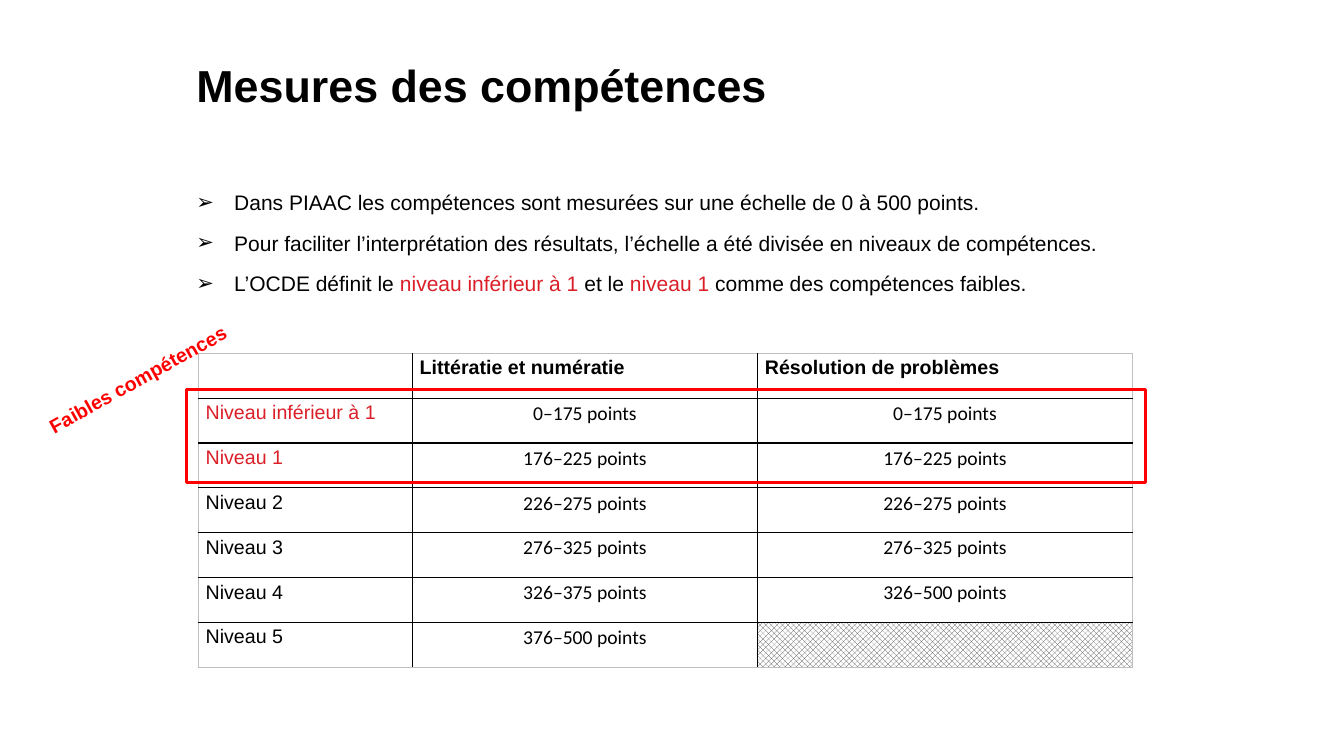
from lxml.etree import SubElement
from pptx import Presentation
from pptx.dml.color import RGBColor
from pptx.enum.dml import MSO_PATTERN_TYPE as Pattern
from pptx.enum.shapes import MSO_SHAPE as Preset
from pptx.enum.text import PP_ALIGN as Align
from pptx.oxml.ns import qn
from pptx.util import Pt

BLACK, WHITE, CRIMSON, RED = "000000", "FFFFFF", "DA1F28", "FF0000"
GREY, HATCH = "BFBFBF", "464646"


def color(hex_text):
    return RGBColor.from_string(hex_text)


def write(paragraph, text, size=14, ink=BLACK, font="Arial", bold=False, align=Align.LEFT):
    paragraph.alignment = align
    run = paragraph.add_run()
    run.text = text
    run.font.size, run.font.name, run.font.bold = Pt(size), font, bold
    run.font.color.rgb = color(ink)


class SlideBuilder:
    """Holds the current slide and the shared style of its elements."""

    body_size = 15
    bullet_indent = 27
    cell_margins = (5.2, 2.6)

    def __init__(self, slide):
        self.slide = slide

    def text_box(self, left, top, width, height, rotation=0):
        shape = self.slide.shapes.add_textbox(Pt(left), Pt(top), Pt(width), Pt(height))
        shape.rotation = rotation
        shape.text_frame.word_wrap = True
        return shape.text_frame

    def label(self, place, text, rotation=0, **style):
        frame = self.text_box(*place, rotation=rotation)
        write(frame.paragraphs[0], text, bold=True, **style)

    def bullets(self, place, items):
        frame = self.text_box(*place)
        for index, parts in enumerate(items):
            paragraph = frame.add_paragraph() if index else frame.paragraphs[0]
            paragraph.line_spacing = Pt(26)
            paragraph.space_before = Pt(3 if index else 0)
            properties = paragraph._p.get_or_add_pPr()
            properties.set("marL", str(Pt(self.bullet_indent)))
            properties.set("indent", str(-Pt(self.bullet_indent)))
            SubElement(properties, qn("a:buFont"), typeface="Arial")
            SubElement(properties, qn("a:buChar"), char="➢")
            for text, ink in parts:
                write(paragraph, text, size=self.body_size, ink=ink)

    def border(self, cell, side, ink, width):
        line = SubElement(cell._tc.get_or_add_tcPr(), qn(f"a:ln{side}"), w=str(Pt(width)))
        fill = SubElement(line, qn("a:solidFill"))
        SubElement(fill, qn("a:srgbClr"), val=ink)

    def table(self, left, top, widths, row_height, rows):
        last_row, last_column = len(rows) - 1, len(widths) - 1
        frame = self.slide.shapes.add_table(
            len(rows), len(widths), Pt(left), Pt(top), Pt(sum(widths)), Pt(row_height * len(rows)))
        table = frame.table
        table.first_row = table.horz_banding = False
        for column, width in zip(table.columns, widths):
            column.width = Pt(width)
        for i, texts in enumerate(rows):
            table.rows[i].height = Pt(row_height)
            for j, text in enumerate(texts):
                cell = table.cell(i, j)
                cell.margin_left = cell.margin_right = Pt(self.cell_margins[0])
                cell.margin_top = cell.margin_bottom = Pt(self.cell_margins[1])
                outer = {"L": j == 0, "R": j == last_column, "T": i == 0, "B": i == last_row}
                for side, at_edge in outer.items():
                    self.border(cell, side, *((GREY, 0.5) if at_edge else (BLACK, 1)))
                cell.fill.background()
                if text:
                    self.cell_text(cell, text, i, j)
        return table

    def cell_text(self, cell, text, row, column):
        is_value = row > 0 and column > 0
        write(cell.text_frame.paragraphs[0], text, bold=row == 0,
              ink=CRIMSON if row in (1, 2) and column == 0 else BLACK,
              font="Calibri" if is_value else "Arial",
              align=Align.CENTER if is_value else Align.LEFT)

    def hatch(self, cell):
        cell.fill.patterned()
        cell.fill.pattern = Pattern.OUTLINED_DIAMOND
        cell.fill.fore_color.rgb = color(HATCH)
        cell.fill.back_color.rgb = color(WHITE)

    def outline(self, left, top, width, height):
        shape = self.slide.shapes.add_shape(
            Preset.RECTANGLE, Pt(left), Pt(top), Pt(width), Pt(height))
        shape.shadow.inherit = False
        shape.fill.background()
        shape.line.color.rgb = color(RED)
        shape.line.width = Pt(2)


def main():
    presentation = Presentation()
    presentation.slide_width, presentation.slide_height = Pt(960), Pt(540)
    builder = SlideBuilder(presentation.slides.add_slide(presentation.slide_layouts[6]))

    builder.label((133.2, 38, 660, 52), "Mesures des compétences", size=32)
    builder.bullets((133.2, 123.8, 757.4, 100.8), [
        [("Dans PIAAC les compétences sont mesurées sur une échelle de 0 à 500 points.", BLACK)],
        [("Pour faciliter l’interprétation des résultats, l’échelle a été divisée "
          "en niveaux de compétences.", BLACK)],
        [("L’OCDE définit le ", BLACK), ("niveau inférieur à 1 ", CRIMSON), ("et le ", BLACK),
         ("niveau 1", CRIMSON), (" comme des compétences faibles.", BLACK)],
    ])
    levels = builder.table(141.7, 252.4, (152.9, 246.6, 267.8), 32.05, [
        ("", "Littératie et numératie", "Résolution de problèmes"),
        ("Niveau inférieur à 1", "0–175 points", "0–175 points"),
        ("Niveau 1", "176–225 points", "176–225 points"),
        ("Niveau 2", "226–275 points", "226–275 points"),
        ("Niveau 3", "276–325 points", "276–325 points"),
        ("Niveau 4", "326–375 points", "326–500 points"),
        ("Niveau 5", "376–500 points", ""),
    ])
    builder.hatch(levels.cell(6, 2))
    builder.outline(133.2, 278.4, 684.9, 66.4)
    builder.label((19.4, 254.9, 172.1, 24.5), "Faibles compétences", rotation=331, ink=RED)

    presentation.save("out.pptx")


if __name__ == "__main__":
    main()
